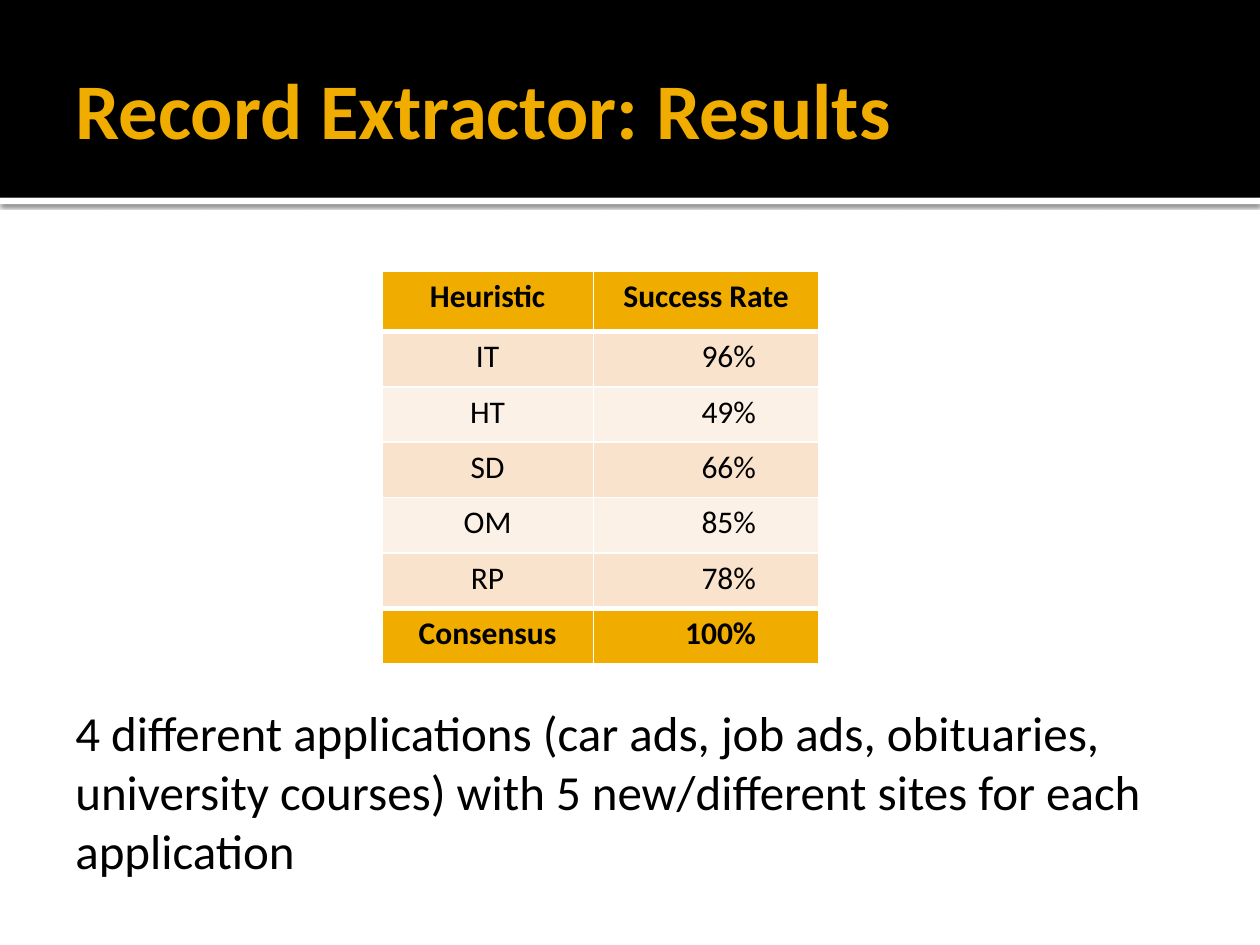
from dataclasses import dataclass
from typing import NamedTuple

from lxml.etree import SubElement
from pptx import Presentation
from pptx.dml.color import RGBColor as Rgb
from pptx.enum.shapes import MSO_SHAPE as Preset
from pptx.enum.text import MSO_ANCHOR as Anchor, MSO_AUTO_SIZE as AutoSize, PP_ALIGN as Align
from pptx.oxml.ns import qn
from pptx.shapes.autoshape import Shape
from pptx.slide import Slide
from pptx.table import _Cell as Cell
from pptx.text.text import _Paragraph as Paragraph
from pptx.util import Inches, Pt


@dataclass(frozen=True)
class Theme:
    """Colours, font and type sizes of the slide."""
    font: str = "Calibri"
    black: str = "000000"
    white: str = "FFFFFF"
    gold: str = "F0AD00"
    band_dark: str = "F9E3CC"
    band_light: str = "FCF1E7"
    title_size: float = 45
    body_size: float = 28
    table_size: float = 18
    thin: float = 1
    thick: float = 3


class Box(NamedTuple):
    """A place on the slide in inches."""
    left: float
    top: float
    width: float
    height: float

    def lengths(self) -> list[Inches]:
        """Return the four measures as lengths."""
        return [Inches(value) for value in self]


class Result(NamedTuple):
    """One heuristic and its success rate."""
    heuristic: str
    rate: str


THEME = Theme()
BAND = Box(0, 0, 10, 1.57)
BAND_EDGE = Box(0, 1.57, 10, 0.05)
TITLE = Box(0.5, 0.17, 9, 1.37)
SUMMARY = Box(0.5, 5.53, 8.76, 1.51)
RESULTS_TABLE = Box(3.03, 2.15, 3.47, 3.12)
COLUMN_WIDTHS = (1.68, 1.79)
HEADER_HEIGHT, ROW_HEIGHT = 0.48, 0.44
RESULTS = [
    Result("Heuristic", "Success Rate"),
    Result("IT", "96%"),
    Result("HT", "49%"),
    Result("SD", "66%"),
    Result("OM", "85%"),
    Result("RP", "78%"),
    Result("Consensus", "100%"),
]
SUMMARY_LINES = [
    "4 different applications (car ads, job ads, obituaries,",
    "university courses) with 5 new/different sites for each",
    "application",
]


def style(paragraph: Paragraph, size: float, color: str, bold: bool = False) -> None:
    """Set the font of a paragraph."""
    font = paragraph.font
    font.name, font.size, font.bold = THEME.font, Pt(size), bold
    font.color.rgb = Rgb.from_string(color)


def draw_band(slide: Slide, box: Box, color: str) -> Shape:
    """Draw a plain rectangle without line or shadow."""
    band = slide.shapes.add_shape(Preset.RECTANGLE, *box.lengths())
    band.fill.solid()
    band.fill.fore_color.rgb = Rgb.from_string(color)
    band.line.fill.background()
    band.shadow.inherit = False
    return band


def cast_shadow(band: Shape) -> None:
    """Give a band a soft shadow below it."""
    effects = band.element.spPr.find(qn("a:effectLst"))
    shadow = SubElement(effects, qn("a:outerShdw"), blurRad=str(Pt(2.5)),
                        dist=str(Pt(0.8)), dir="5400000", algn="tl", rotWithShape="0")
    tint = SubElement(shadow, qn("a:srgbClr"), val=THEME.black)
    SubElement(tint, qn("a:alpha"), val="60000")


def draw_title(slide: Slide) -> None:
    """Draw the title in the black band."""
    frame = slide.shapes.add_textbox(*TITLE.lengths()).text_frame
    frame.word_wrap = True
    frame.vertical_anchor = Anchor.MIDDLE
    frame.margin_right = Inches(0.05)
    frame.text = "Record Extractor: Results"
    style(frame.paragraphs[0], THEME.title_size, THEME.gold, bold=True)


def draw_summary(slide: Slide) -> None:
    """Draw the summary under the table."""
    frame = slide.shapes.add_textbox(*SUMMARY.lengths()).text_frame
    frame.word_wrap = False
    frame.auto_size = AutoSize.SHAPE_TO_FIT_TEXT
    frame.text = "\n".join(SUMMARY_LINES)
    for paragraph in frame.paragraphs:
        style(paragraph, THEME.body_size, THEME.black)


def set_borders(cell: Cell, top: float, bottom: float) -> None:
    """Put white borders before the fill of a cell."""
    properties = cell._tc.get_or_add_tcPr()
    widths = {"a:lnL": THEME.thin, "a:lnR": THEME.thin, "a:lnT": top, "a:lnB": bottom}
    for index, (side, width) in enumerate(widths.items()):
        border = SubElement(properties, qn(side), w=str(Pt(width)))
        SubElement(SubElement(border, qn("a:solidFill")), qn("a:srgbClr"), val=THEME.white)
        properties.insert(index, border)


def draw_results(slide: Slide) -> None:
    """Draw the table of success rates."""
    last = len(RESULTS) - 1
    table = slide.shapes.add_table(len(RESULTS), len(COLUMN_WIDTHS),
                                   *RESULTS_TABLE.lengths()).table
    table.last_row = True
    for column, width in zip(table.columns, COLUMN_WIDTHS):
        column.width = Inches(width)
    for row, result in enumerate(RESULTS):
        table.rows[row].height = Inches(ROW_HEIGHT if row else HEADER_HEIGHT)
        emphasis = row in (0, last)
        band = THEME.band_dark if row % 2 else THEME.band_light
        for column, text in enumerate(result):
            cell = table.cell(row, column)
            cell.text = text
            cell.fill.solid()
            cell.fill.fore_color.rgb = Rgb.from_string(THEME.gold if emphasis else band)
            paragraph = cell.text_frame.paragraphs[0]
            style(paragraph, THEME.table_size, THEME.black, bold=emphasis)
            is_rate = row > 0 and column == 1
            paragraph.alignment = Align.RIGHT if is_rate else Align.CENTER
            if is_rate:
                cell.margin_right = Inches(0.5)
            set_borders(cell,
                        top=THEME.thick if row in (1, last) else THEME.thin,
                        bottom=THEME.thick if row in (0, last - 1) else THEME.thin)


def main() -> None:
    """Build and save the slide."""
    deck = Presentation()
    deck.slide_width, deck.slide_height = Inches(10), Inches(7.5)
    slide = deck.slides.add_slide(deck.slide_layouts[6])
    slide.background.fill.solid()
    slide.background.fill.fore_color.rgb = Rgb.from_string(THEME.white)
    cast_shadow(draw_band(slide, BAND_EDGE, THEME.white))
    draw_band(slide, BAND, THEME.black)
    draw_title(slide)
    draw_summary(slide)
    draw_results(slide)
    deck.save("out.pptx")


if __name__ == "__main__":
    main()
